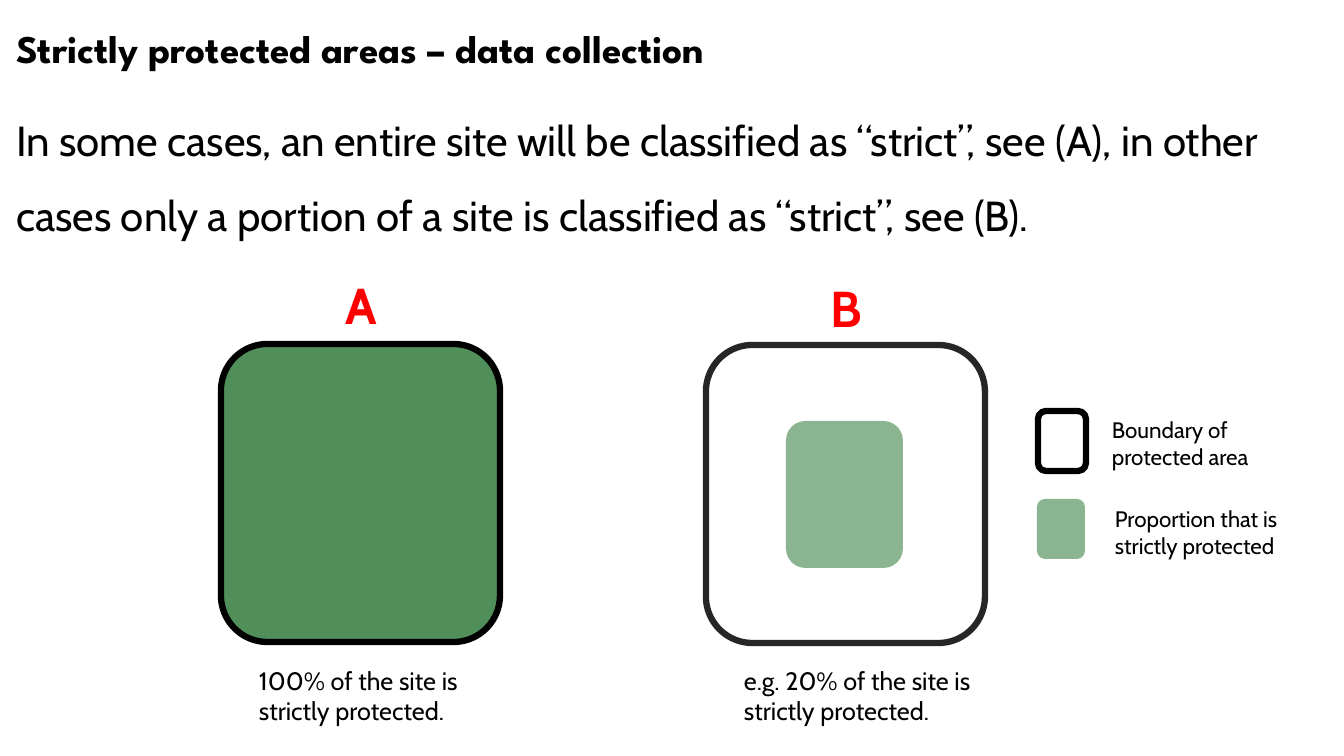
from lxml.etree import SubElement
from pptx import Presentation
from pptx.dml.color import RGBColor
from pptx.enum.shapes import MSO_SHAPE
from pptx.enum.text import MSO_ANCHOR, MSO_AUTO_SIZE, PP_ALIGN
from pptx.oxml.ns import qn
from pptx.util import Emu, Pt

BLACK = RGBColor(0x00, 0x00, 0x00)
CHARCOAL = RGBColor(0x26, 0x26, 0x26)
WHITE = RGBColor(0xFF, 0xFF, 0xFF)
RED = RGBColor(0xFF, 0x00, 0x00)
GREEN = RGBColor(0x19, 0x6B, 0x24)

TITLE = "Strictly protected areas – data collection"
BODY = (
    "In some cases, an entire site will be classified as “strict”, see (A), "
    "in other cases only a portion of a site is classified as “strict”, see (B)."
)
TITLE_BOX = (6, 19, 1302, 57)
BODY_BOX = (6, 84, 1331, 155)

SITE_A = (221, 345, 279, 298)
SITE_A_BOUNDARY = (221, 344, 279, 298)
SITE_B = (706, 345, 279, 298)
STRICT_PORTION = (786, 421, 117, 147)
LEGEND_STRICT = (1037, 499, 48, 60)
LEGEND_BOUNDARY = (1038, 411, 48, 60)

AREAS = [
    (SITE_A, GREEN, None),
    (SITE_A_BOUNDARY, GREEN, BLACK),
    (SITE_B, None, CHARCOAL),
    (STRICT_PORTION, GREEN, None),
    (LEGEND_STRICT, GREEN, None),
    (LEGEND_BOUNDARY, WHITE, BLACK),
]
LABELS = [
    ((336, 269, 49, 71), "A", 36, RED, True),
    ((821, 272, 49, 71), "B", 36, RED, True),
    ((249, 660, 223, 72), "100% of the site is strictly protected.", 18, BLACK, False),
    ((734, 660, 251, 72), "e.g. 20% of the site is strictly protected.", 18, BLACK, False),
    ((1102, 411, 175, 65), "Boundary of\nprotected area", 16, BLACK, False),
    ((1105, 500, 214, 65), "Proportion that is strictly protected", 16, BLACK, False),
]

EMU_PER_PX = 914400 / 100.8


def px(*lengths):
    return [Emu(round(length * EMU_PER_PX)) for length in lengths]


def write(shape, text, size, color=BLACK, bold=False, font="Cabin", spacing=1.0):
    frame = shape.text_frame
    frame.text = text
    frame.word_wrap = True
    frame.auto_size = MSO_AUTO_SIZE.NONE
    frame.vertical_anchor = MSO_ANCHOR.TOP
    for paragraph in frame.paragraphs:
        paragraph.alignment = PP_ALIGN.LEFT
        paragraph.line_spacing = spacing
        paragraph.space_before = Pt(0)
        paragraph.font.name = font
        paragraph.font.size = Pt(size)
        paragraph.font.bold = bold
        paragraph.font.color.rgb = color


def place(shape, box):
    shape.left, shape.top, shape.width, shape.height = px(*box)


def add_area(slide, box, fill, line):
    shape = slide.shapes.add_shape(MSO_SHAPE.ROUNDED_RECTANGLE, *px(*box))
    shape.shadow.inherit = False
    if fill is None:
        shape.fill.background()
    else:
        shape.fill.solid()
        shape.fill.fore_color.rgb = fill
    if fill == GREEN:
        color = shape.fill._xPr.find(qn("a:solidFill"))[0]
        SubElement(color, qn("a:alpha")).set("val", "50000")
    if line is None:
        shape.line.fill.background()
    else:
        shape.line.color.rgb = line
        shape.line.width = Pt(4.5)


def main():
    presentation = Presentation()
    presentation.slide_width, presentation.slide_height = px(1344, 756)
    slide = presentation.slides.add_slide(presentation.slide_layouts[1])

    title = slide.shapes.title
    place(title, TITLE_BOX)
    write(title, TITLE, 28, bold=True, font="League Spartan")

    body = slide.placeholders[1]
    place(body, BODY_BOX)
    write(body, BODY, 30, spacing=1.5)
    properties = body.text_frame.paragraphs[0]._p.get_or_add_pPr()
    properties.set("marL", "0")
    properties.set("indent", "0")
    bullet = SubElement(properties, qn("a:buNone"))
    properties.find(qn("a:defRPr")).addprevious(bullet)

    for box, fill, line in AREAS:
        add_area(slide, box, fill, line)
    for box, text, size, color, bold in LABELS:
        write(slide.shapes.add_textbox(*px(*box)), text, size, color, bold)

    presentation.save("out.pptx")


if __name__ == "__main__":
    main()
